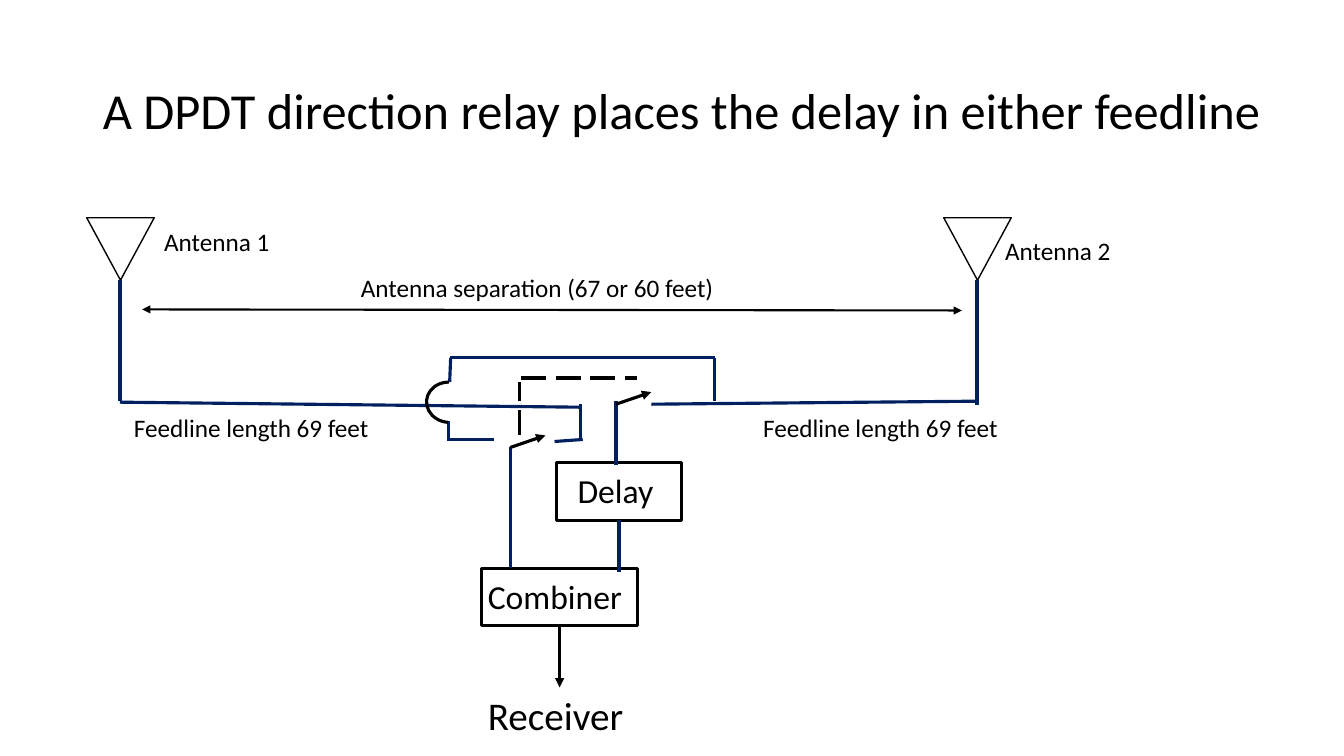
from lxml.etree import SubElement
from pptx import Presentation
from pptx.dml.color import RGBColor
from pptx.enum.dml import MSO_LINE
from pptx.enum.shapes import MSO_CONNECTOR, MSO_SHAPE
from pptx.enum.text import MSO_ANCHOR, MSO_AUTO_SIZE, PP_ALIGN
from pptx.oxml.ns import qn
from pptx.util import Inches, Pt

FONT = "Calibri"
BLACK = "000000"
NAVY = "002060"
COLUMNS, ROWS = 133.3, 75
SLIDE_WIDTH, SLIDE_HEIGHT = Inches(13.33), Inches(7.5)

# Feedlines, relay contacts and delay loop: (column, row) of both ends
WIRES = [
    ((57.6, 40.4), (11.9, 39.9)),
    ((96.9, 39.8), (64.6, 40.1)),
    ((50.6, 44.3), (50.6, 56.4)),
    ((61.1, 39.8), (61.1, 46.1)),
    ((57.6, 40.1), (57.6, 43.6)),
    ((57.8, 43.6), (55, 43.8)),
    ((49, 43.6), (44.6, 43.6)),
    ((44.5, 41.8), (44.5, 43.8)),
    ((44.7, 35.5), (44.6, 37.9)),
    ((70.9, 35.5), (44.6, 35.5)),
    ((70.9, 35.5), (70.9, 39.8)),
]
RELAY_ARMS = [((61.1, 40.1), (64.6, 38.9)), ((50.6, 44.4), (54.1, 43.2))]
RELAY_LINKAGE = [((51.7, 37.5), (63.2, 37.5)), ((51.5, 43.2), (51.5, 37.9))]


def x(column):
    return round(SLIDE_WIDTH * column / COLUMNS)


def y(row):
    return round(SLIDE_HEIGHT * row / ROWS)


def box(left, top, width, height):
    return x(left), y(top), x(width), y(height)


def color(hex_code):
    return RGBColor.from_string(hex_code)


def write(frame, text, size):
    paragraph = frame.paragraphs[0]
    paragraph.alignment = PP_ALIGN.LEFT
    run = paragraph.add_run()
    run.text = text
    run.font.name = FONT
    run.font.size = Pt(size)
    run.font.color.rgb = color(BLACK)
    return paragraph


def add_title(slide, text):
    title = slide.shapes.title
    title.left, title.top, title.width, title.height = box(9.2, 4, 118.9, 14.5)
    title.text_frame.vertical_anchor = MSO_ANCHOR.MIDDLE
    write(title.text_frame, text, 36).line_spacing = 0.9


def add_label(slide, text, place, size=18, wrap=False):
    frame = slide.shapes.add_textbox(*box(*place)).text_frame
    frame.word_wrap = wrap
    frame.auto_size = MSO_AUTO_SIZE.SHAPE_TO_FIT_TEXT
    write(frame, text, size)


def add_outline(slide, kind, place, weight=2.25, rotation=0):
    """Add an unfilled preset shape with a black line."""
    outline = slide.shapes.add_shape(kind, *box(*place))
    outline.shadow.inherit = False
    outline.fill.background()
    outline.line.color.rgb = color(BLACK)
    outline.line.width = Pt(weight)
    outline.rotation = rotation
    return outline


def add_line(slide, start, end, hex_code=NAVY, weight=2.25, dash=None, arrows=()):
    """Add a straight line; arrows names its ends, headEnd before tailEnd."""
    line = slide.shapes.add_connector(
        MSO_CONNECTOR.STRAIGHT, x(start[0]), y(start[1]), x(end[0]), y(end[1]))
    line.line.color.rgb = color(hex_code)
    line.line.width = Pt(weight)
    if dash:
        line.line.dash_style = dash
    properties = line._element.spPr
    for arrow in arrows:
        SubElement(properties.find(qn("a:ln")), qn(f"a:{arrow}"), type="triangle")
    SubElement(properties, qn("a:effectLst"))
    return line


def add_antenna(slide, left, mast_foot):
    add_outline(slide, MSO_SHAPE.ISOSCELES_TRIANGLE, (left, 21.6, 6.7, 6.2), 1, 180)
    mast = left + 3.3
    add_line(slide, (mast, 27.8), (mast, mast_foot))


def add_block(slide, text, place, label_place):
    add_label(slide, text, label_place, 24)
    return add_outline(slide, MSO_SHAPE.RECTANGLE, place)


def add_wire_jump(slide):
    jump = add_outline(slide, MSO_SHAPE.ARC, (42.3, 37.9, 4.5, 4), rotation=184.3)
    jump.adjustments[0] = 161.85
    jump.adjustments[1] = 50.76


def main():
    deck = Presentation()
    deck.slide_width, deck.slide_height = SLIDE_WIDTH, SLIDE_HEIGHT
    slide = deck.slides.add_slide(deck.slide_layouts.get_by_name("Title Only"))
    add_title(slide, "A DPDT direction relay places the delay in either feedline")

    add_antenna(slide, 8.6, 39.8)
    add_antenna(slide, 93.6, 40.2)
    add_label(slide, "Antenna 1", (15.3, 22, 12.6, 4))
    add_label(slide, "Antenna 2", (98.7, 22.9, 12.6, 4))
    add_label(slide, "Antenna separation (67 or 60 feet)", (34.8, 26.5, 37.9, 4))
    add_line(slide, (14.1, 30.7), (95.4, 30.8), BLACK, 1.5,
             arrows=("headEnd", "tailEnd"))
    for left in (12.3, 74.7):
        add_label(slide, "Feedline length 69 feet", (left, 40.45, 25.6, 4))

    delay = add_block(slide, "Delay", (55.2, 45.9, 12.4, 5.7), (56.3, 46.1, 9.6, 5))
    combiner = add_block(slide, "Combiner", (47.8, 56.4, 15.4, 5.7),
                         (47.4, 56.6, 15.4, 5))
    add_label(slide, "Receiver", (47.4, 68.1, 17.4, 5.7), 28, wrap=True)

    for start, end in WIRES:
        add_line(slide, start, end)
    for start, end in RELAY_ARMS:
        add_line(slide, start, end, BLACK, arrows=("tailEnd",))
    for start, end in RELAY_LINKAGE:
        add_line(slide, start, end, BLACK, dash=MSO_LINE.LONG_DASH)
    add_wire_jump(slide)

    delay_output = add_line(slide, (61.4, 51.6), (61.4, 56.7))
    delay_output.begin_connect(delay, 2)
    receiver_feed = add_line(slide, (55.5, 62.1), (55.5, 68.2), BLACK,
                             arrows=("tailEnd",))
    receiver_feed.begin_connect(combiner, 2)

    deck.save("out.pptx")


if __name__ == "__main__":
    main()
